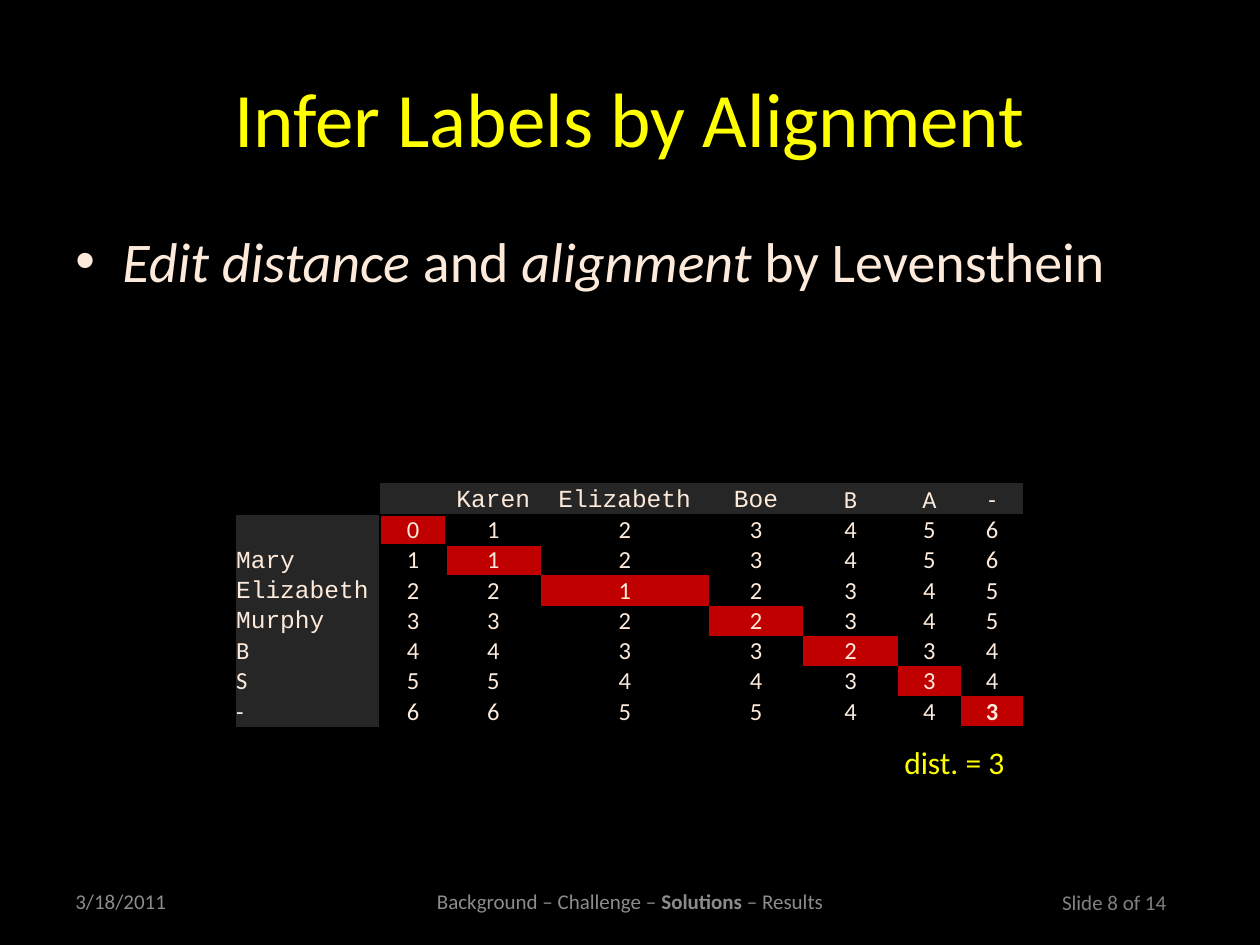
from dataclasses import dataclass

from lxml import etree
from pptx import Presentation
from pptx.dml.color import RGBColor
from pptx.enum.text import MSO_ANCHOR, PP_ALIGN
from pptx.oxml.ns import qn
from pptx.util import Cm, Pt

LEFT, CENTER = PP_ALIGN.LEFT, PP_ALIGN.CENTER
TOP, MIDDLE, BOTTOM = MSO_ANCHOR.TOP, MSO_ANCHOR.MIDDLE, MSO_ANCHOR.BOTTOM
BLANK_LAYOUT = 6
NO_TABLE_STYLE = "{2D5ABB26-0587-4C30-8999-92F81FD0307C}"


@dataclass(frozen=True)
class Theme:
    background: str = "000000"
    accent: str = "FFFF00"
    body: str = "FDEADA"
    footer: str = "8C8C8C"
    counter: str = "808080"
    header_fill: str = "262626"
    path_fill: str = "C00000"
    font: str = "Calibri"
    name_font: str = "Courier New"
    title_size: int = 44
    body_size: int = 32
    note_size: int = 18
    table_size: int = 14
    footer_size: int = 12


def write_text(paragraph, text, *, font, size, color, bold=False, italic=False):
    run = paragraph.add_run()
    run.text = text
    run.font.name = font
    run.font.size = Pt(size)
    run.font.color.rgb = RGBColor.from_string(color)
    run.font.bold = bold
    run.font.italic = italic


class SlideBuilder:
    """Draws styled elements on the current slide."""

    def __init__(self, slide, theme):
        self.slide = slide
        self.theme = theme
        self.fill_solid(slide.background.fill, theme.background)

    def fill_solid(self, fill, color):
        fill.solid()
        fill.fore_color.rgb = RGBColor.from_string(color)

    def add_text(self, runs, left, top, width, height, *, size, color,
                 align=LEFT, anchor=TOP):
        shape = self.slide.shapes.add_textbox(Cm(left), Cm(top), Cm(width), Cm(height))
        frame = shape.text_frame
        frame.word_wrap = True
        frame.vertical_anchor = anchor
        paragraph = frame.paragraphs[0]
        paragraph.alignment = align
        for text, emphasis in runs:
            write_text(paragraph, text, font=self.theme.font, size=size,
                       color=color, **emphasis)
        return paragraph

    def add_bullet(self, runs, left, top, width, height, *, indent, **style):
        paragraph = self.add_text(runs, left, top, width, height, **style)
        paragraph.space_before = Pt(6.4)
        paragraph.space_after = Pt(6)
        properties = paragraph._p.get_or_add_pPr()
        properties.set("marL", str(Cm(indent)))
        properties.set("indent", str(-Cm(indent)))
        etree.SubElement(properties, qn("a:buFont"), typeface="Arial")
        etree.SubElement(properties, qn("a:buChar"), char="•")

    def add_border(self, cell, side):
        line = etree.SubElement(cell._tc.get_or_add_tcPr(), qn(f"a:ln{side}"),
                                w=str(Pt(1)))
        fill = etree.SubElement(line, qn("a:solidFill"))
        etree.SubElement(fill, qn("a:srgbClr"), val=self.theme.background)

    def add_distance_table(self, names_across, names_down, distances, left, top,
                           column_widths, header_height, row_height):
        heights = [header_height] + [row_height] * len(names_down)
        shape = self.slide.shapes.add_table(
            len(heights), len(column_widths), Cm(left), Cm(top),
            Cm(sum(column_widths)), Cm(sum(heights)))
        table = shape.table
        table.first_row = table.horz_banding = False
        table._tbl.tblPr.find(qn("a:tableStyleId")).text = NO_TABLE_STYLE
        for column, width in zip(table.columns, column_widths):
            column.width = Cm(width)
        for row, height in zip(table.rows, heights):
            row.height = Cm(height)
        rows = [["", *names_across]]
        rows += [[name, *values] for name, values in zip(names_down, distances)]
        for row_index, values in enumerate(rows):
            for column_index, value in enumerate(values):
                self.format_cell(table, row_index, column_index, str(value))

    def format_cell(self, table, row, column, text):
        theme = self.theme
        last_row, last_column = len(table.rows) - 1, len(table.columns) - 1
        cell = table.cell(row, column)
        cell.margin_left = cell.margin_right = cell.margin_top = cell.margin_bottom = 0
        cell.vertical_anchor = BOTTOM
        borders = {
            "L": row > 0 and column == 1,
            "R": row > 0 and column in (0, last_column),
            "T": row == 1 and column > 0,
            "B": column > 0 and row in (0, last_row),
        }
        for side, drawn in borders.items():
            if drawn:
                self.add_border(cell, side)
        if row == column == 0:
            cell.fill.background()
        elif row == 0 or column == 0:
            self.fill_solid(cell.fill, theme.header_fill)
        elif row == column:
            self.fill_solid(cell.fill, theme.path_fill)
        else:
            cell.fill.background()
        paragraph = cell.text_frame.paragraphs[0]
        paragraph.alignment = CENTER if column else LEFT
        if text:
            write_text(paragraph, text, size=theme.table_size, color=theme.body,
                       font=theme.name_font if len(text) > 1 else theme.font,
                       bold=row == last_row and column == last_column)
        else:
            ending = paragraph._p.get_or_add_endParaRPr()
            ending.set("sz", str(theme.table_size * 100))


def main():
    presentation = Presentation()
    presentation.slide_width, presentation.slide_height = Cm(25.4), Cm(19.05)
    slide = presentation.slides.add_slide(presentation.slide_layouts[BLANK_LAYOUT])
    theme = Theme()
    builder = SlideBuilder(slide, theme)
    plain, bold, italic = {}, {"bold": True}, {"italic": True}

    builder.add_text([("Slide 8 of 14", plain)], 21.16, 17.81, 2.97, 0.76,
                     size=theme.footer_size, color=theme.counter)
    builder.add_text([("Infer Labels by Alignment", plain)], 1.27, 0.76, 22.86, 3.18,
                     size=theme.title_size, color=theme.accent,
                     align=CENTER, anchor=MIDDLE)
    builder.add_bullet(
        [("Edit distance", italic), (" and ", plain), ("alignment", italic),
         (" by Levensthein", plain)],
        1.27, 4.45, 22.86, 6.15, indent=0.95, size=theme.body_size, color=theme.body)

    footer = {"size": theme.footer_size, "color": theme.footer, "anchor": MIDDLE}
    builder.add_text(
        [("Background – Challenge – ", plain), ("Solutions", bold),
         (" – Results", plain)],
        7.2, 17.65, 11, 1.02, align=CENTER, **footer)
    builder.add_text([("3/18/2011", plain)], 1.27, 17.65, 5.93, 1.02, **footer)

    builder.add_distance_table(
        names_across=["", "Karen", "Elizabeth", "Boe", "B", "A", "-"],
        names_down=["", "Mary", "Elizabeth", "Murphy", "B", "S", "-"],
        distances=[
            [0, 1, 2, 3, 4, 5, 6],
            [1, 1, 2, 3, 4, 5, 6],
            [2, 2, 1, 2, 3, 4, 5],
            [3, 3, 2, 2, 3, 4, 5],
            [4, 4, 3, 3, 2, 3, 4],
            [5, 5, 4, 4, 3, 3, 4],
            [6, 6, 5, 5, 4, 4, 3],
        ],
        left=4.76, top=9.74,
        column_widths=[2.9, 1.33, 1.91, 3.39, 1.9, 1.91, 1.27, 1.26],
        header_height=0.64, row_height=0.61)
    builder.add_text([("dist. = 3", plain)], 17.98, 14.86, 2.97, 1.02,
                     size=theme.note_size, color=theme.accent)
    presentation.save("out.pptx")


if __name__ == "__main__":
    main()
